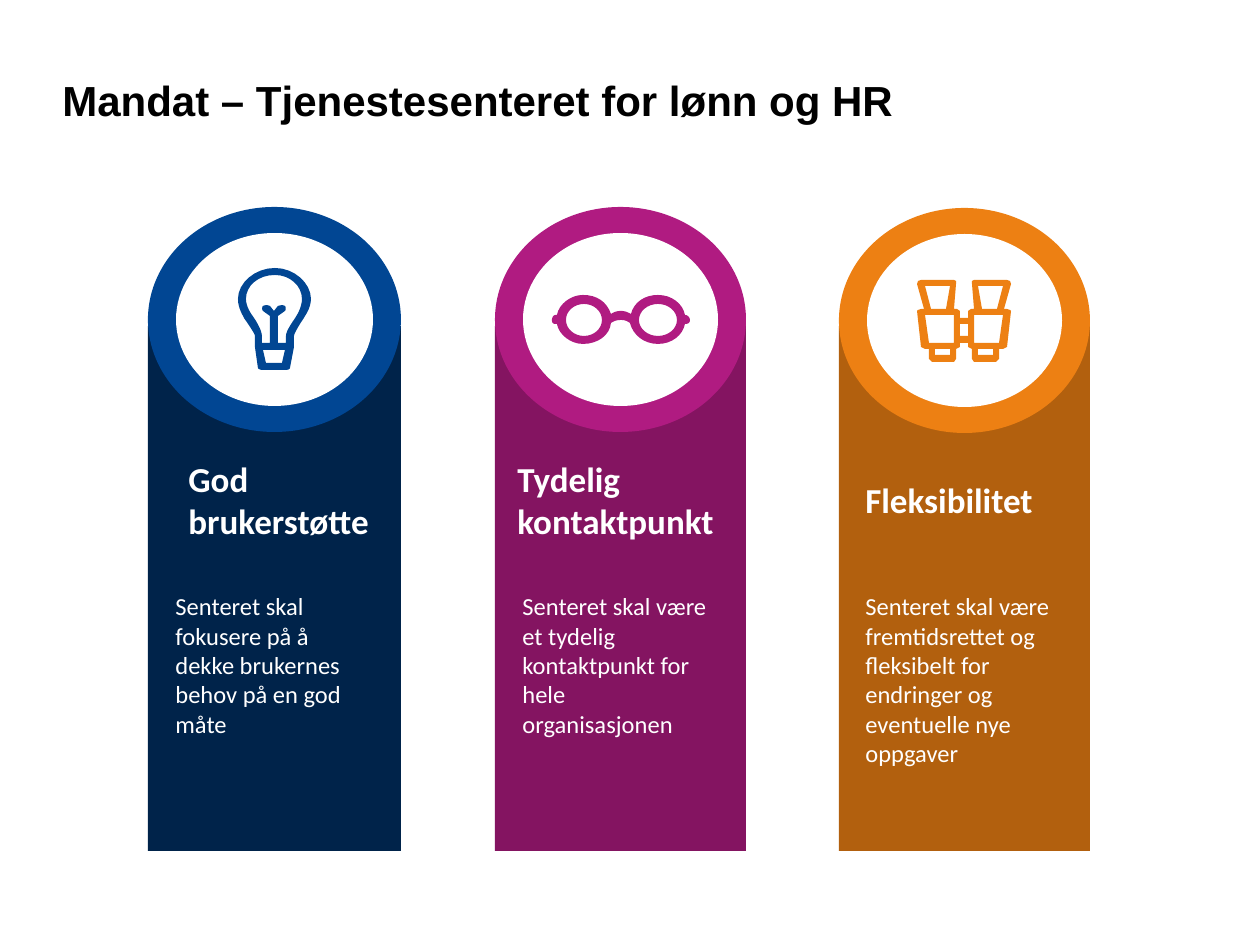
from pptx import Presentation
from pptx.dml.color import RGBColor
from pptx.enum.shapes import MSO_SHAPE as Shape
from pptx.enum.text import MSO_ANCHOR as Anchor
from pptx.util import Pt

PX = 914400 / 126  # EMU per px
CURVE_STEPS = 8
WHITE = "FFFFFF"
TITLE = "Mandat – Tjenestesenteret for lønn og HR"


def ellipse_outline(cx, cy, rx, ry):
    """Four Bezier quarters, starting at the right."""
    kx, ky = rx * 0.55, ry * 0.55
    return [
        (cx + rx, cy),
        (cx + rx, cy + ky, cx + kx, cy + ry, cx, cy + ry),
        (cx - kx, cy + ry, cx - rx, cy + ky, cx - rx, cy),
        (cx - rx, cy - ky, cx - kx, cy - ry, cx, cy - ry),
        (cx + kx, cy - ry, cx + rx, cy - ky, cx + rx, cy),
    ]


def mirrored(points, axis=964):
    return [(2 * axis - x, y) for x, y in reversed(points)]


# Outlines in px: a pair is a line end, six numbers are a Bezier curve.
BULB = [
    [(275, 268), (255, 268, 238, 283, 238, 299), (238, 309, 244, 317, 244, 318),
     (249, 325, 255, 334, 255, 336), (255, 347), (258, 368),
     (258, 369, 261, 370, 262, 370), (286, 370), (288, 370, 290, 369, 290, 368),
     (294, 347), (294, 336), (294, 334, 299, 325, 304, 318),
     (304, 317, 311, 309, 311, 299), (311, 283, 294, 268, 275, 268)],
    [(282, 363), (266, 363), (263, 350), (285, 350)],
    [(297, 315), (295, 319, 286, 330, 286, 336), (286, 343), (278, 343),
     (278, 316), (285, 311), (286, 310, 286, 307, 285, 306),
     (283, 305, 281, 305, 278, 306), (274, 311), (270, 306),
     (268, 305, 265, 305, 263, 306), (262, 307, 262, 310, 263, 311),
     (270, 316), (270, 343), (262, 343), (262, 336),
     (262, 330, 255, 319, 252, 315), (252, 315, 246, 307, 246, 299),
     (246, 286, 258, 275, 275, 275), (290, 275, 302, 286, 302, 299),
     (302, 307, 297, 315, 297, 315)],
]
GLASSES = [
    [(685, 315), (683, 304, 672, 295, 658, 295), (645, 295, 634, 302, 631, 314),
     (627, 312, 625, 311, 621, 311), (617, 311, 614, 312, 611, 314),
     (607, 302, 597, 295, 583, 295), (571, 295, 559, 304, 557, 315), (556, 315),
     (553, 315, 552, 318, 552, 320), (552, 323, 553, 324, 556, 324), (557, 324),
     (559, 335, 571, 344, 583, 344), (598, 344, 610, 335, 611, 323),
     (614, 321, 617, 320, 621, 320), (625, 320, 627, 321, 630, 323),
     (633, 335, 644, 344, 658, 344), (672, 344, 683, 335, 685, 324),
     (688, 324, 690, 323, 690, 320), (690, 318, 688, 315, 685, 315)],
    ellipse_outline(584, 320, 18, 16),
    ellipse_outline(658, 320, 19, 16),
]
LEFT_BARREL = [
    (960, 318), (960, 311), (957, 309), (954, 309), (956, 284), (956, 281),
    (954, 280), (921, 280), (918, 281), (917, 284), (924, 309), (921, 309),
    (918, 310), (917, 311), (921, 347), (925, 349), (929, 349), (929, 359),
    (932, 362), (954, 362), (956, 359), (956, 349), (960, 347), (960, 343)]
LEFT_HOLES = [
    [(925, 286), (950, 286), (946, 309), (931, 309)],
    [(954, 315), (954, 343), (929, 343), (925, 315)],
    [(950, 355), (935, 355), (935, 349), (950, 349)],
]
BINOCULARS = [
    LEFT_BARREL + mirrored(LEFT_BARREL),
    *LEFT_HOLES,
    *(mirrored(hole) for hole in LEFT_HOLES),
    [(960, 324), (968, 324), (968, 336), (960, 336)],
]

PILLARS = [
    dict(left=148, width=253, top=207, dark="00234A", bright="014693", icon=BULB,
         heading=["God brukerstøtte"], heading_left=176, body_left=163,
         body="Senteret skal fokusere på å dekke brukernes behov på en god måte"),
    dict(left=495, width=251, top=207, dark="841461", bright="B01B81", icon=GLASSES,
         heading=["Tydelig", "kontaktpunkt"], heading_left=505, body_left=510,
         body="Senteret skal være et tydelig kontaktpunkt for hele organisasjonen"),
    dict(left=839, width=251, top=208, dark="B2600E", bright="ED8013", icon=BINOCULARS,
         heading=["Fleksibilitet"], heading_left=853, body_left=853,
         body="Senteret skal være fremtidsrettet og fleksibelt for endringer "
              "og eventuelle nye oppgaver"),
]
PILLAR_TOP, PILLAR_BOTTOM = 326, 851
RING_HEIGHT, RING_X, RING_Y = 225, 28, 26


def emu(*lengths):
    return [round(length * PX) for length in lengths]


def paint(shape, color):
    shape.shadow.inherit = False
    shape.fill.solid()
    shape.fill.fore_color.rgb = RGBColor.from_string(color)
    shape.line.fill.background()


def add_filled(shapes, kind, box, color):
    paint(shapes.add_shape(kind, *emu(*box)), color)


def add_text(shapes, box, lines, size, color, font, bold=False, anchor=Anchor.TOP):
    frame = shapes.add_textbox(*emu(*box)).text_frame
    frame.word_wrap = True
    frame.vertical_anchor = anchor
    frame.text = "\n".join(lines)
    for paragraph in frame.paragraphs:
        paragraph.font.size = Pt(size)
        paragraph.font.name = font
        paragraph.font.bold = bold
        paragraph.font.color.rgb = RGBColor.from_string(color)


def flatten(outline):
    """Turn the curves of an outline into short straight lines."""
    points = [outline[0]]
    for step in outline[1:]:
        if len(step) == 2:
            points.append(step)
            continue
        corners = [points[-1], step[:2], step[2:4], step[4:]]
        for i in range(1, CURVE_STEPS + 1):
            t = i / CURVE_STEPS
            weights = ((1 - t) ** 3, 3 * t * (1 - t) ** 2, 3 * t * t * (1 - t), t ** 3)
            points.append(tuple(sum(w * c[axis] for w, c in zip(weights, corners))
                                for axis in (0, 1)))
    return [emu(*point) for point in points]


def add_icon(shapes, outlines, color):
    first, *holes = [flatten(outline) for outline in outlines]
    builder = shapes.build_freeform(*first[0])
    builder.add_line_segments(first[1:], close=True)
    for hole in holes:
        builder.move_to(*hole[0])
        builder.add_line_segments(hole[1:], close=True)
    paint(builder.convert_to_shape(), color)


def add_pillar(shapes, pillar):
    left, width, top = pillar["left"], pillar["width"], pillar["top"]
    add_filled(shapes, Shape.RECTANGLE,
               (left, PILLAR_TOP, width, PILLAR_BOTTOM - PILLAR_TOP), pillar["dark"])
    add_filled(shapes, Shape.OVAL, (left, top, width, RING_HEIGHT), pillar["bright"])
    add_filled(shapes, Shape.OVAL,
               (left + RING_X, top + RING_Y, width - 2 * RING_X, RING_HEIGHT - 2 * RING_Y),
               WHITE)
    add_icon(shapes, pillar["icon"], pillar["bright"])
    add_text(shapes, (pillar["heading_left"], 451, 227, 97), pillar["heading"],
             20, WHITE, "Calibri", bold=True, anchor=Anchor.MIDDLE)
    add_text(shapes, (pillar["body_left"], 585, 222, 190), [pillar["body"]],
             14, WHITE, "Calibri")


def main():
    deck = Presentation()
    deck.slide_width, deck.slide_height = emu(1260, 945)
    slide = deck.slides.add_slide(deck.slide_layouts[6])
    add_text(slide.shapes, (50, 68, 1071, 63), [TITLE], 24, "000000", "Arial",
             bold=True, anchor=Anchor.MIDDLE)
    for pillar in PILLARS:
        add_pillar(slide.shapes.add_group_shape().shapes, pillar)
    deck.save("out.pptx")


if __name__ == "__main__":
    main()
